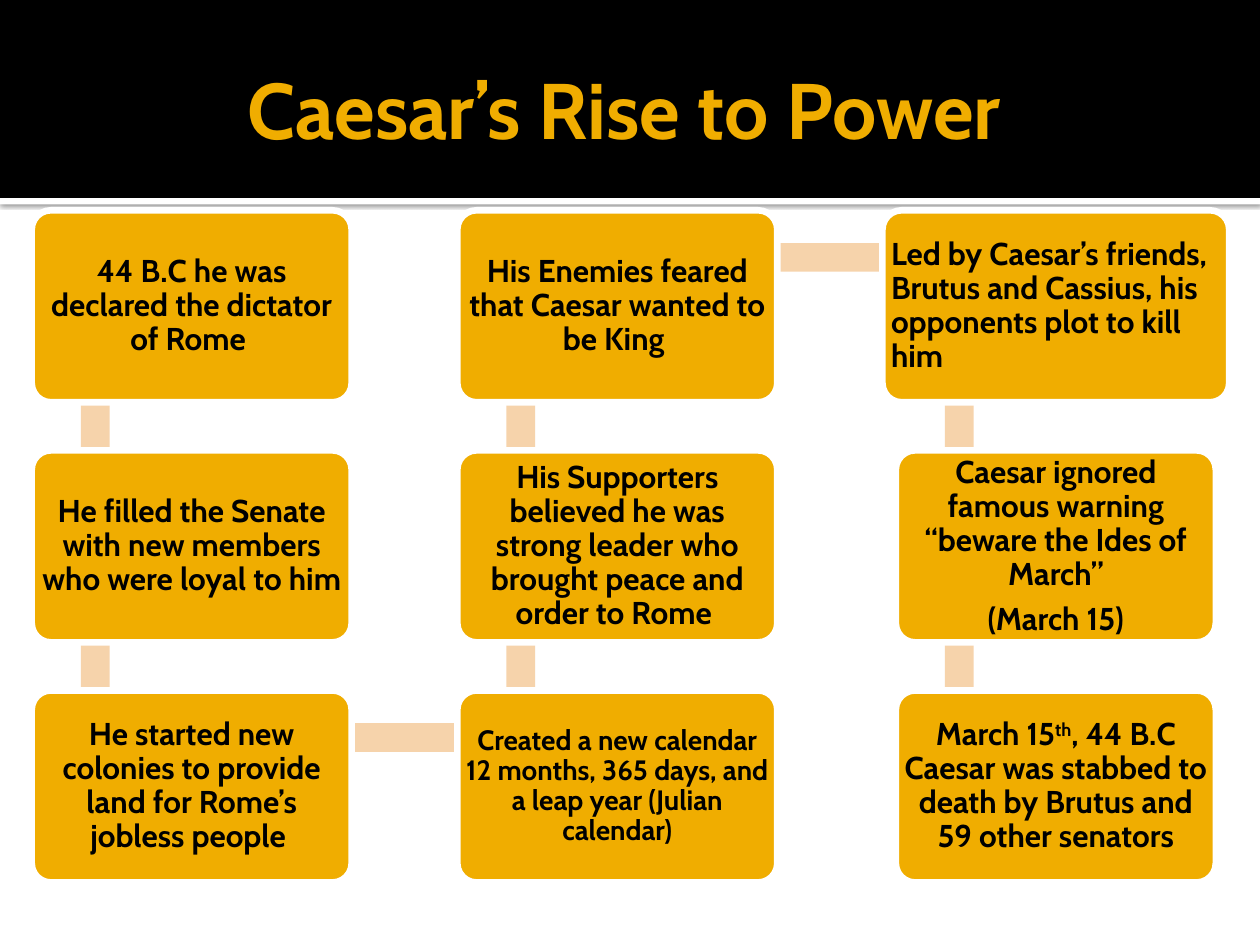
from dataclasses import dataclass

from lxml import etree
from pptx import Presentation
from pptx.dml.color import RGBColor as RGB
from pptx.enum.shapes import MSO_SHAPE as SHAPE
from pptx.enum.text import MSO_ANCHOR as ANCHOR, PP_ALIGN as ALIGN
from pptx.oxml.ns import qn
from pptx.util import Cm, Pt


@dataclass(frozen=True)
class Theme:
    font: str = "Cabin"
    gold: RGB = RGB(0xF0, 0xAD, 0x00)
    peach: RGB = RGB(0xF6, 0xD3, 0xAB)
    black: RGB = RGB(0, 0, 0)
    white: RGB = RGB(255, 255, 255)
    title: float = 45
    body: float = 18
    small: float = 16


def write_text(tf, text, *, font, size, color, align=ALIGN.CENTER,
               line=1.0, after=0, insets=(0, 0, 0, 0)):
    """Fill a frame: newline starts a paragraph, ^...^ is superscript."""
    tf.word_wrap = True
    tf.vertical_anchor = ANCHOR.MIDDLE
    (tf.margin_left, tf.margin_top,
     tf.margin_right, tf.margin_bottom) = map(Cm, insets)
    for i, part in enumerate(text.split("\n")):
        p = tf.add_paragraph() if i else tf.paragraphs[0]
        p.alignment = align
        p.line_spacing = line
        p.space_after = Pt(after)
        for j, piece in enumerate(part.split("^")):
            r = p.add_run()
            r.text = piece
            r.font.name, r.font.size, r.font.bold = font, Pt(size), True
            r.font.color.rgb = color
            if j % 2:
                r.font._element.set("baseline", "30000")


class Deck:
    def __init__(self, prs, theme):
        self.theme = theme
        self.s = prs.slides.add_slide(prs.slide_layouts[6])

    def rect(self, x, y, w, h, fill, kind=SHAPE.RECTANGLE):
        sp = self.s.shapes.add_shape(kind, Cm(x), Cm(y), Cm(w), Cm(h))
        sp.shadow.inherit = False
        sp.fill.solid()
        sp.fill.fore_color.rgb = fill
        sp.line.fill.background()
        return sp

    def shadow(self, sp, blur, dist, alpha):
        effects = sp._element.spPr.find(qn("a:effectLst"))
        shd = etree.SubElement(effects, qn("a:outerShdw"), dir="5400000", algn="t",
                               blurRad=str(Pt(blur)), dist=str(Pt(dist)), rotWithShape="0")
        clr = etree.SubElement(shd, qn("a:srgbClr"), val="000000")
        etree.SubElement(clr, qn("a:alpha"), val=str(alpha * 1000))

    def title(self, text, x, y, w, h):
        t = self.theme
        sp = self.s.shapes.add_textbox(Cm(x), Cm(y), Cm(w), Cm(h))
        write_text(sp.text_frame, text, font=t.font, size=t.title, color=t.gold,
                   insets=(0.25, 0.13, 0.13, 0.13))

    def bar(self, start, end, thick):
        """Join two points by a level or upright bar."""
        (x1, y1), (x2, y2) = start, end
        half = thick / 2
        if x1 == x2:
            self.rect(x1 - half, min(y1, y2), thick, abs(y2 - y1), self.theme.peach)
        else:
            self.rect(x1, y1 - half, x2 - x1, thick, self.theme.peach)

    def box(self, text, x, y, w, h, size, align):
        t = self.theme
        sp = self.rect(x, y, w, h, t.gold, SHAPE.ROUNDED_RECTANGLE)
        sp.adjustments[0] = 0.1
        sp.line.color.rgb = t.white
        sp.line.width = Pt(3.78)
        write_text(sp.text_frame, text, font=t.font, size=size, color=t.black,
                   align=align, line=0.9, after=size * 0.35, insets=(0.06,) * 4)


# Grid of boxes, in cm
LEFTS, TOP, PITCH = (0.64, 9.22, 18.06), 4.24, 4.84
BOX_W, BOX_H = 6.45, 3.87
WIDE = 0.54  # extra width of the wide box
BAR, BAR_DX, BAR_DY = 0.58, 1.28, 0.95

# Events in order as (column, row, text, format)
EVENTS = [
    (0, 0, "44 B.C he was declared the dictator of Rome ", {}),
    (0, 1, "He filled the Senate with new members who were loyal to him ", {}),
    (0, 2, "He started new colonies to provide land for Rome’s jobless people ", {}),
    (1, 2, "Created a new calendar 12 months, 365 days, and a leap year "
           "(Julian calendar)", {"size": Theme.small}),
    (1, 1, "His Supporters believed he was strong leader who brought peace "
           "and order to Rome ", {}),
    (1, 0, "His Enemies feared that Caesar wanted to be King ", {}),
    (2, 0, "Led by Caesar’s friends, Brutus and Cassius, his opponents plot "
           "to kill him", {"align": ALIGN.LEFT, "extra": WIDE}),
    (2, 1, "Caesar ignored famous warning “beware the Ides of March”\n(March 15)", {}),
    (2, 2, "March 15^th^, 44 B.C Caesar was stabbed to death by Brutus "
           "and 59 other senators", {}),
]


def main():
    prs = Presentation()
    prs.slide_width, prs.slide_height = Cm(25.4), Cm(19.05)
    theme = Theme()
    deck = Deck(prs, theme)

    # Header band with its shadowed rule
    rule = deck.rect(0, 3.99, 25.4, 0.13, theme.white)
    deck.shadow(rule, blur=2.5, dist=0.8, alpha=60)
    deck.rect(0, 0, 25.4, 3.99, theme.black)
    deck.title("Caesar’s Rise to Power ", 1.27, 0.43, 22.86, 3.48)

    # Bars between successive events
    joints = [(LEFTS[c] + BAR_DX, TOP + r * PITCH + BAR_DY) for c, r, *_ in EVENTS]
    for start, end in zip(joints, joints[1:]):
        deck.bar(start, end, BAR)

    # Event boxes
    for col, row, text, fmt in EVENTS:
        extra = fmt.get("extra", 0)
        deck.box(text, LEFTS[col] - extra / 2, TOP + row * PITCH, BOX_W + extra, BOX_H,
                 fmt.get("size", theme.body), fmt.get("align", ALIGN.CENTER))

    prs.save("out.pptx")


if __name__ == "__main__":
    main()
